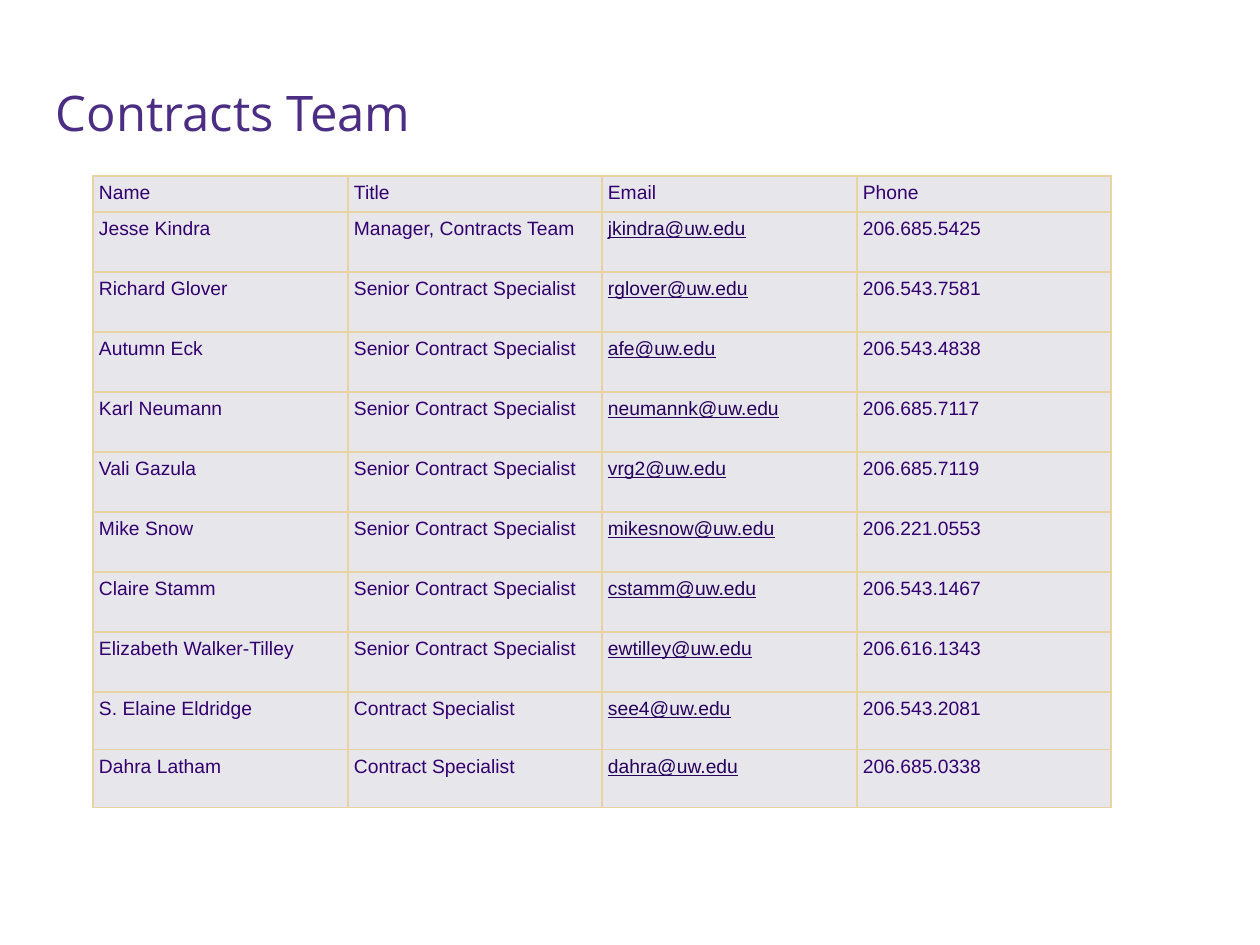
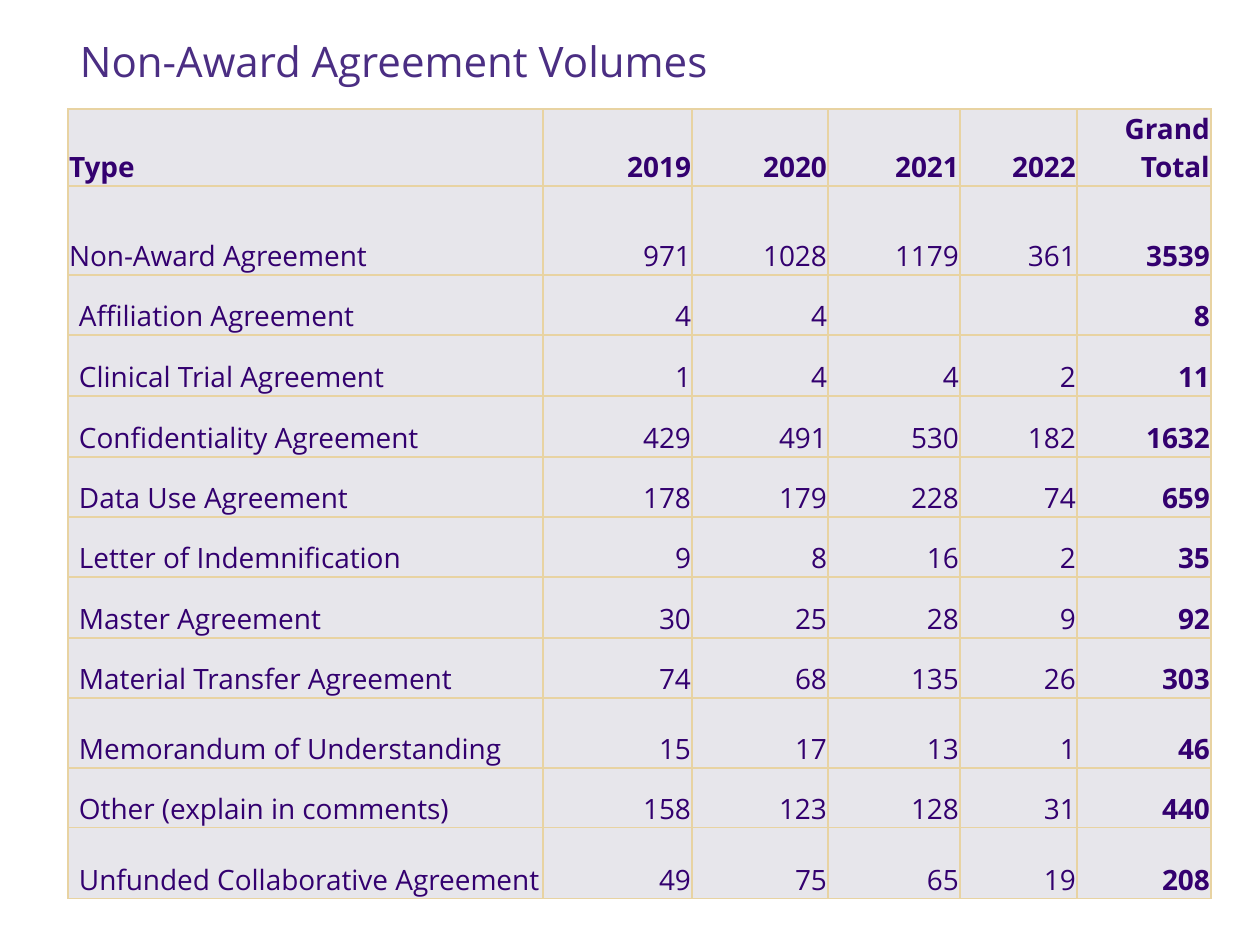
from itertools import accumulate

from lxml import etree
from pptx import Presentation
from pptx import util as u
from pptx.dml.color import RGBColor
from pptx.enum import text
from pptx.oxml import ns

PX = 914400 // 126
TITLE_PURPLE = RGBColor(0x4B, 0x2E, 0x83)
TEXT_PURPLE = RGBColor(0x33, 0x00, 0x6F)
LINK_PURPLE = RGBColor(0x26, 0x00, 0x5C)
CELL_GREY = RGBColor(0xE7, 0xE6, 0xEB)
BORDER_GOLD = RGBColor(0xE8, 0xD3, 0xA2)
TITLE_FONT = "Open Sans"
TITLE_MARGINS = (13, 10, 13, 10)

SENIOR = "Senior Contract Specialist"
TEAM = [
    ("Name", "Title", "Email", "Phone"),
    ("Jesse Kindra", "Manager, Contracts Team", "jkindra@uw.edu", "206.685.5425"),
    ("Richard Glover", SENIOR, "rglover@uw.edu", "206.543.7581"),
    ("Autumn Eck", SENIOR, "afe@uw.edu", "206.543.4838"),
    ("Karl Neumann", SENIOR, "neumannk@uw.edu", "206.685.7117"),
    ("Vali Gazula", SENIOR, "vrg2@uw.edu", "206.685.7119"),
    ("Mike Snow", SENIOR, "mikesnow@uw.edu", "206.221.0553"),
    ("Claire Stamm", SENIOR, "cstamm@uw.edu", "206.543.1467"),
    ("Elizabeth Walker-Tilley", SENIOR, "ewtilley@uw.edu", "206.616.1343"),
    ("S. Elaine Eldridge", "Contract Specialist", "see4@uw.edu", "206.543.2081"),
    ("Dahra Latham", "Contract Specialist", "dahra@uw.edu", "206.685.0338"),
]
TEAM_COLUMNS = [255, 254] * 2
TEAM_ROWS = [36] + [60] * 8 + [58] * 2

VOLUMES = [
    ("Type", "2019", "2020", "2021", "2022", "Grand Total"),
    ("Non-Award Agreement", 971, 1028, 1179, 361, 3539),
    ("Affiliation Agreement", 4, 4, "", "", 8),
    ("Clinical Trial Agreement", 1, 4, 4, 2, 11),
    ("Confidentiality Agreement", 429, 491, 530, 182, 1632),
    ("Data Use Agreement", 178, 179, 228, 74, 659),
    ("Letter of Indemnification", 9, 8, 16, 2, 35),
    ("Master Agreement", 30, 25, 28, 9, 92),
    ("Material Transfer Agreement", 74, 68, 135, 26, 303),
    ("Memorandum of Understanding", 15, 17, 13, 1, 46),
    ("Other (explain in comments)", 158, 123, 128, 31, 440),
    ("Unfunded Collaborative Agreement", 49, 75, 65, 19, 208),
]
VOLUME_COLUMNS = [475, 149, 136, 132, 117, 134]
VOLUME_ROWS = [77, 89, 60, 61, 61, 60, 60, 61, 60, 70, 60, 71]


def write(frame, words, *, font, size, color, bold=False, underline=False,
          align=text.PP_ALIGN.LEFT, spacing=None):
    paragraph = frame.paragraphs[0]
    paragraph.alignment = align
    paragraph.line_spacing = spacing
    run = paragraph.add_run()
    run.text = words
    run.font.name = font
    run.font.size = u.Pt(size)
    run.font.color.rgb = color
    run.font.bold = bold
    run.font.underline = underline


def set_margins(holder, margins):
    """Set left, top, right and bottom margins of a cell or text frame."""
    for side, margin in zip(("left", "top", "right", "bottom"), margins):
        setattr(holder, f"margin_{side}", margin * PX)


def add_title(slide, words, box, *, size, anchor, spacing=None):
    frame = slide.shapes.add_textbox(*(length * PX for length in box)).text_frame
    frame.word_wrap = True
    frame.vertical_anchor = anchor
    set_margins(frame, TITLE_MARGINS)
    write(frame, words, font=TITLE_FONT, size=size, color=TITLE_PURPLE, spacing=spacing)


def add_borders(cell):
    properties = cell._tc.get_or_add_tcPr()
    for index, side in enumerate(("lnL", "lnR", "lnT", "lnB")):
        line = etree.Element(ns.qn(f"a:{side}"), w=str(u.Pt(1)))
        fill = etree.SubElement(line, ns.qn("a:solidFill"))
        etree.SubElement(fill, ns.qn("a:srgbClr"), val=str(BORDER_GOLD))
        properties.insert(index, line)


def add_grid(slide, rows, left, top, widths, heights, cell_format):
    """Draw a table; cell_format(row, column) gives margins, anchor and text format."""
    *_, width = accumulate(widths)
    *_, height = accumulate(heights)
    table = slide.shapes.add_table(
        len(rows), len(widths), left * PX, top * PX, width * PX, height * PX).table
    table.first_row = table.horz_banding = False
    for column, length in zip(table.columns, widths):
        column.width = length * PX
    for row, length in zip(table.rows, heights):
        row.height = length * PX
    for row_index, values in enumerate(rows):
        for column_index, value in enumerate(values):
            cell = table.cell(row_index, column_index)
            margins, anchor, style = cell_format(row_index, column_index)
            set_margins(cell, margins)
            cell.vertical_anchor = anchor
            cell.fill.solid()
            cell.fill.fore_color.rgb = CELL_GREY
            add_borders(cell)
            if value != "":
                write(cell.text_frame, str(value), **style)


def team_format(row, column):
    is_email = row > 0 and column == 2
    style = dict(font="Arial", size=11, underline=is_email,
                 color=LINK_PURPLE if is_email else TEXT_PURPLE)
    return (6, 6, 6, 6), text.MSO_ANCHOR.TOP, style


def volume_format(row, column):
    is_subtype = row > 1 and column == 0
    style = dict(font=TITLE_FONT, size=16, color=TEXT_PURPLE,
                 bold=row == 0 or column == len(VOLUME_COLUMNS) - 1,
                 align=text.PP_ALIGN.RIGHT if column else text.PP_ALIGN.LEFT)
    return (11 if is_subtype else 1, 1, 1, 0), text.MSO_ANCHOR.BOTTOM, style


def main():
    presentation = Presentation()
    presentation.slide_width = u.Inches(10)
    presentation.slide_height = u.Inches(7.5)
    blank = presentation.slide_layouts[6]

    team = presentation.slides.add_slide(blank)
    add_title(team, "Contracts Team", (43, 72, 1174, 105),
              size=28, anchor=text.MSO_ANCHOR.TOP)
    add_grid(team, TEAM, 93, 176, TEAM_COLUMNS, TEAM_ROWS, team_format)

    volumes = presentation.slides.add_slide(blank)
    add_title(volumes, "Non-Award Agreement Volumes", (67, 0, 1086, 97),
              size=24, anchor=text.MSO_ANCHOR.BOTTOM, spacing=0.9)
    add_grid(volumes, VOLUMES, 68, 109, VOLUME_COLUMNS, VOLUME_ROWS, volume_format)

    presentation.save("out.pptx")


if __name__ == "__main__":
    main()
